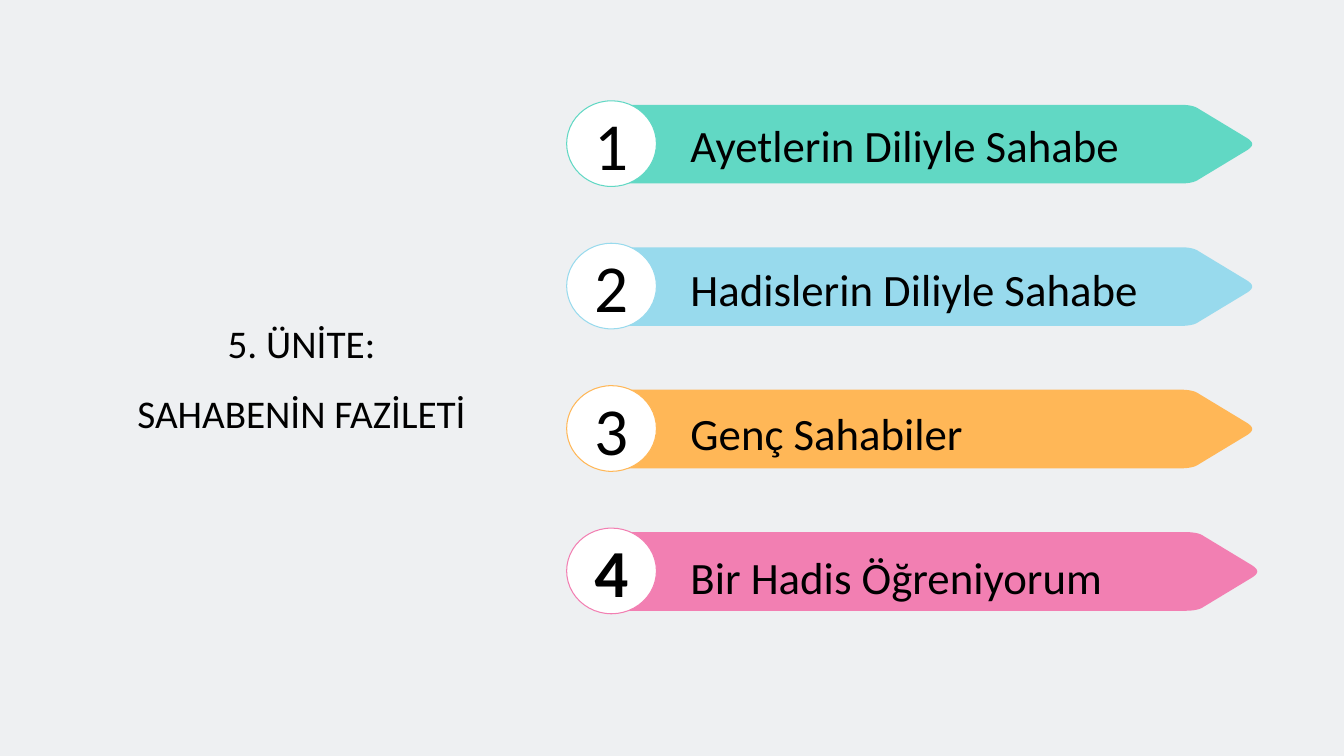
from pptx import Presentation
from pptx.dml.color import RGBColor
from pptx.enum.shapes import MSO_SHAPE
from pptx.enum.text import MSO_ANCHOR, MSO_AUTO_SIZE, PP_ALIGN
from pptx.util import Inches, Pt

OVAL = MSO_SHAPE.OVAL
LEFT, CENTER = PP_ALIGN.LEFT, PP_ALIGN.CENTER
TOP, MIDDLE = MSO_ANCHOR.TOP, MSO_ANCHOR.MIDDLE
NO_FIT = MSO_AUTO_SIZE.NONE

FONT = "Calibri"
TOPICS = [
    ("Ayetlerin Diliyle Sahabe", "61D8C4"),
    ("Hadislerin Diliyle Sahabe", "98DAED"),
    ("Genç Sahabiler", "FFB757"),
    ("Bir Hadis Öğreniyorum", "F27FB2"),
]
ROW_PITCH = 1.413
LABEL_PITCH = 1.427
CURVE_STEPS = 8


def rgb(color):
    return RGBColor.from_string(color)


def write(shape, text, size, align=LEFT, anchor=TOP, bold=False, wrap=True,
          spacing=1.0):
    tf = shape.text_frame
    tf.auto_size = NO_FIT
    tf.word_wrap = wrap
    tf.vertical_anchor = anchor
    p = tf.paragraphs[0]
    p.alignment = align
    p.line_spacing = spacing
    r = p.add_run()
    r.text = text
    r.font.name, r.font.size, r.font.bold = FONT, Pt(size), bold
    r.font.color.rgb = rgb("000000")


def curve(p0, p1, p2, p3):
    """Return points along a cubic Bezier curve."""
    points = []
    for i in range(CURVE_STEPS + 1):
        t = i / CURVE_STEPS
        weights = ((1 - t) ** 3, 3 * t * (1 - t) ** 2, 3 * t * t * (1 - t), t ** 3)
        points.append(tuple(sum(w * p[axis] for w, p in zip(weights, (p0, p1, p2, p3)))
                            for axis in (0, 1)))
    return points


def add_banner(shapes, left, top, width, height, color):
    """Draw a bar with rounded corners and a blunt point on the right."""
    mid = height / 2
    upper = (
        curve((0, 0.1), (0, 0.04), (0.1, 0), (0.22, 0))
        + curve((width - 0.7, 0), (width - 0.64, 0),
                (width - 0.57, 0.01), (width - 0.53, 0.04))
        + curve((width - 0.05, mid - 0.06), (width - 0.02, mid - 0.04),
                (width, mid - 0.02), (width, mid))
    )
    lower = [(x, height - y) for x, y in reversed(upper)]
    points = [(Inches(left + x), Inches(top + y)) for x, y in upper + lower]
    builder = shapes.build_freeform(*points[0])
    builder.add_line_segments(points[1:], close=True)
    s = builder.convert_to_shape()
    s.shadow.inherit = False
    s.fill.solid()
    s.fill.fore_color.rgb = rgb(color)
    s.line.fill.background()


def add_badge(shapes, left, top, width, height, number, color, bold):
    s = shapes.add_shape(OVAL, Inches(left), Inches(top), Inches(width), Inches(height))
    s.shadow.inherit = False
    s.fill.solid()
    s.fill.fore_color.rgb = rgb("FFFFFF")
    s.line.color.rgb = rgb(color)
    s.line.width = Pt(0.75)
    write(s, str(number), 48, align=CENTER, anchor=MIDDLE, bold=bold, wrap=False)


def add_topics(slide, left, top):
    for i, (label, color) in enumerate(TOPICS):
        last = i == len(TOPICS) - 1
        y = top + i * ROW_PITCH
        group = slide.shapes.add_group_shape()
        add_banner(group.shapes, left + (0.28 if last else 0.23), y + 0.04,
                   6.57, 0.78, color)
        add_badge(group.shapes, left, y, 0.89, 0.85, i + 1, color, bold=last)
        box = slide.shapes.add_textbox(
            Inches(left + 1.13), Inches(top + 0.12 + i * LABEL_PITCH),
            Inches(4.7), Inches(0.64))
        write(box, label, 32, wrap=False)


def add_title(slide, left, top, width, height):
    title = slide.shapes.title
    title.left, title.top = Inches(left), Inches(top)
    title.width, title.height = Inches(width), Inches(height)
    write(title, "5. ÜNİTE: SAHABENİN FAZİLETİ", 28, align=CENTER, spacing=1.5)


def main():
    prs = Presentation()
    prs.slide_width, prs.slide_height = Inches(13.33), Inches(7.5)
    slide = prs.slides.add_slide(prs.slide_layouts[5])
    slide.background.fill.solid()
    slide.background.fill.fore_color.rgb = rgb("EEF0F2")
    add_title(slide, 1.2, 2.88, 3.58, 1.44)
    add_topics(slide, 5.62, 1)
    prs.save("out.pptx")


if __name__ == "__main__":
    main()
